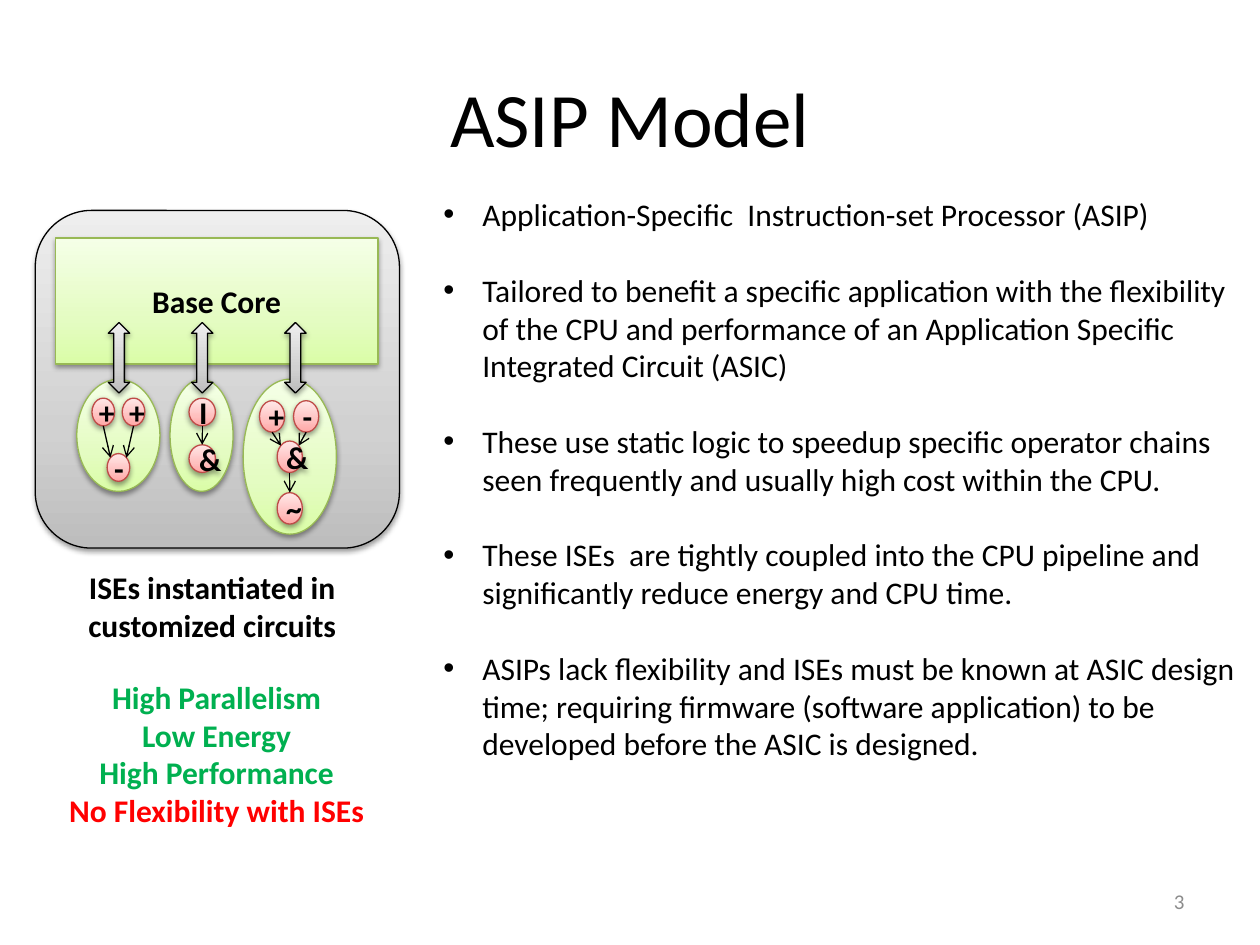
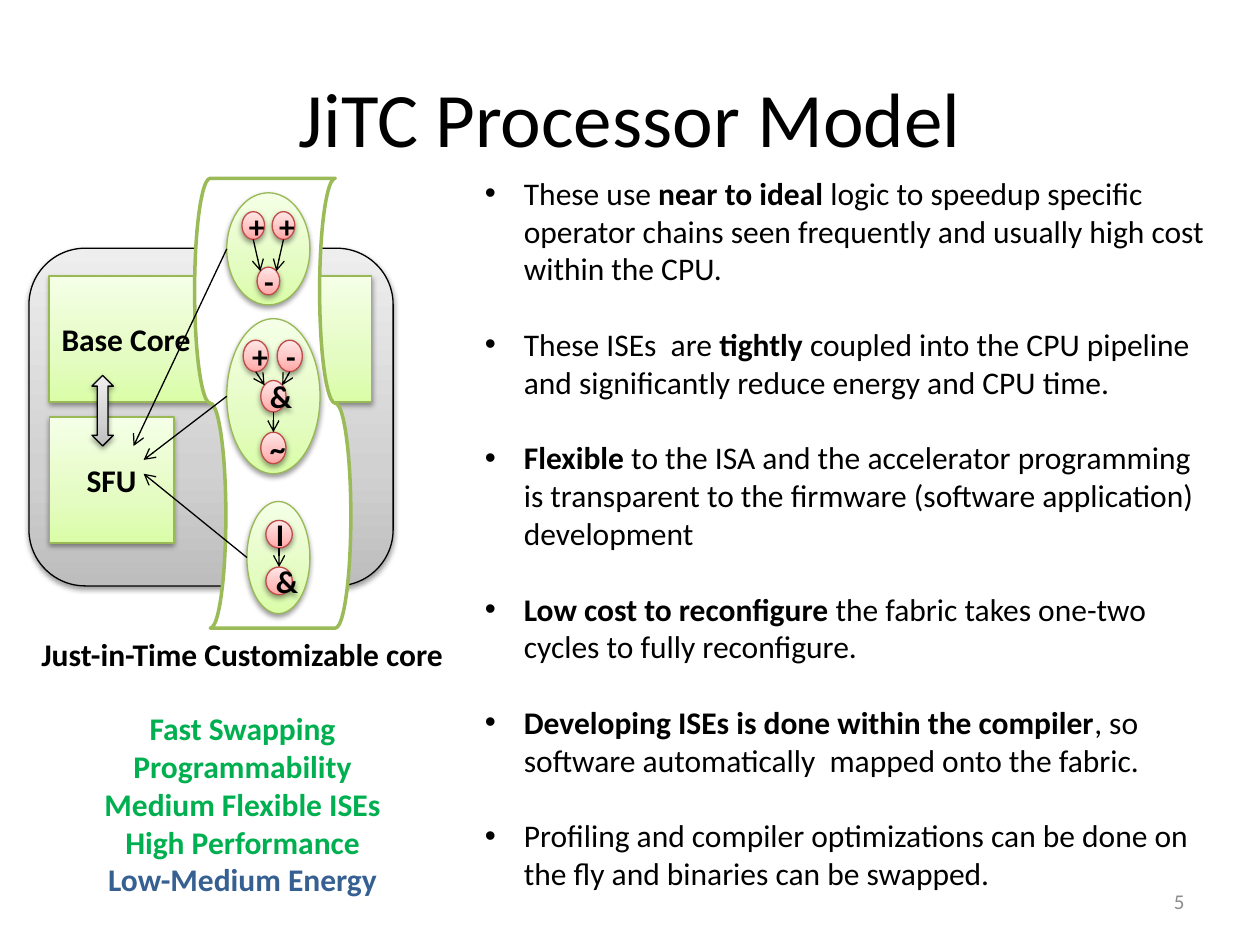
import lxml.etree
import pptx
import pptx.dml.color
import pptx.enum.shapes
import pptx.enum.text
import pptx.oxml.ns
import pptx.util

Inches = pptx.util.Inches
Pt = pptx.util.Pt
Kind = pptx.enum.shapes.MSO_SHAPE
Align = pptx.enum.text.PP_ALIGN
Anchor = pptx.enum.text.MSO_ANCHOR

FONT = "Calibri"
BLACK, WHITE, GREY = "000000", "FFFFFF", "8C8C8C"
GOOD, BAD, FAIR = "00B050", "FF0000", "376092"
STEEL = (["BDBDBD", "D1D1D1", "EEEEEE"], BLACK)
LIME = (["DAFDA7", "E4FCC2", "F5FFE7"], "98B955")
ROSE = (["FFA6A5", "FFC0BF", "FFE7E7"], "BF4C48")
STOPS = (0, 35, 100)

PAIR = {
    "size": (0.66, 0.89),
    "dot": (0.18, 0.22),
    "ops": [("+", 0.12, 0.15), ("+", 0.36, 0.15), ("-", 0.24, 0.59)],
    "flow": [(0, 2), (1, 2)],
}
CHAIN = {
    "size": (0.5, 0.89),
    "dot": (0.21, 0.22),
    "ops": [("I", 0.15, 0.15), ("&", 0.15, 0.52)],
    "flow": [(0, 1)],
}
TREE = {
    "size": (0.74, 1.23),
    "dot": (0.2, 0.25),
    "ops": [("+", 0.13, 0.17), ("&", 0.27, 0.49), ("-", 0.4, 0.17), ("~", 0.27, 0.9)],
    "flow": [(0, 1), (2, 1), (1, 3)],
}


def tint(code):
    return pptx.dml.color.RGBColor.from_string(code)


def node(parent, tag, **attrs):
    name = pptx.oxml.ns.qn("a:" + tag)
    return lxml.etree.SubElement(parent, name, {k: str(v) for k, v in attrs.items()})


def write(frame, lines, size=18, color=BLACK, bold=False, align=Align.CENTER,
          anchor=Anchor.TOP, wrap=True, bullet=False):
    frame.word_wrap = wrap
    frame.vertical_anchor = anchor
    for i, line in enumerate(lines):
        para = frame.add_paragraph() if i else frame.paragraphs[0]
        para.alignment = align
        words, hue = line if isinstance(line, tuple) else (line, color)
        for j, part in enumerate(words.split("*")):
            if part:
                run = para.add_run()
                run.text = part
                run.font.name = FONT
                run.font.size = Pt(size)
                run.font.bold = bold or j % 2 == 1
                run.font.color.rgb = tint(hue)
        if bullet:
            para.space_before = Pt(21.6 if i else 0)
            props = para._p.get_or_add_pPr()
            props.set("marL", str(Inches(0.31)))
            props.set("indent", str(-Inches(0.31)))
            node(props, "buFont", typeface="Arial")
            node(props, "buChar", char="•")


def label(slide, box, lines, **style):
    area = slide.shapes.add_textbox(*map(Inches, box))
    write(area.text_frame, lines, **style)


def solid(slide, kind, box, look, words="", align=Align.CENTER):
    shape = slide.shapes.add_shape(kind, *map(Inches, box))
    shades, edge = look
    shape.fill.gradient()
    shape.fill.gradient_angle = 90
    ramp = next(shape._element.spPr.iter(pptx.oxml.ns.qn("a:gsLst")))
    for stop in list(ramp):
        ramp.remove(stop)
    for pos, shade in zip(STOPS, shades):
        node(node(ramp, "gs", pos=pos * 1000), "srgbClr", val=shade)
    shape.line.color.rgb = tint(edge)
    shape.line.width = Pt(0.75)
    shape.shadow.inherit = False
    glow = shape._element.spPr.find(pptx.oxml.ns.qn("a:effectLst"))
    cast = node(glow, "outerShdw", blurRad=Pt(3.1), dist=Pt(1.6), dir=5400000, rotWithShape=0)
    node(node(cast, "srgbClr", val=BLACK), "alpha", val=38000)
    if words:
        write(shape.text_frame, [words], bold=True, align=align, anchor=Anchor.MIDDLE)
    return shape


def arrow(slide, start, end):
    wire = slide.shapes.add_connector(
        pptx.enum.shapes.MSO_CONNECTOR.STRAIGHT, *map(Inches, (*start, *end)))
    wire.line.color.rgb = tint(BLACK)
    wire.line.width = Pt(0.75)
    node(wire.line._get_or_add_ln(), "tailEnd", type="arrow")
    node(wire._element.spPr, "effectLst")


def cluster(slide, x, y, plan):
    solid(slide, Kind.OVAL, (x, y, *plan["size"]), LIME)
    w, h = plan["dot"]
    for sign, dx, dy in plan["ops"]:
        solid(slide, Kind.OVAL, (x + dx, y + dy, w, h), ROSE, sign)
    for a, b in plan["flow"]:
        (_, ax, ay), (_, bx, by) = plan["ops"][a], plan["ops"][b]
        side = (ax > bx) - (ax < bx)
        drop = 0.15 * h if side else 0
        arrow(slide, (x + ax + w / 2, y + ay + h),
              (x + bx + w / 2 + side * 0.35 * w, y + by + drop))


def link(slide, x, y):
    solid(slide, Kind.UP_DOWN_ARROW, (x, y, 0.17, 0.56), STEEL)


def chip(slide, x, y, align):
    solid(slide, Kind.ROUNDED_RECTANGLE, (x, y, 2.89, 2.68), STEEL)
    solid(slide, Kind.RECTANGLE, (x + 0.16, y + 0.22, 2.56, 1), LIME, "Base Core", align)


def fixed(slide, x, y):
    chip(slide, x, y, Align.CENTER)
    for dx, plan in ((0.33, PAIR), (1.07, CHAIN), (1.65, TREE)):
        cluster(slide, x + dx, y + 1.34, plan)
    for dx in (0.58, 1.24, 1.98):
        link(slide, x + dx, y + 0.89)


def tape(slide, x, y):
    strip = slide.shapes.add_shape(
        Kind.FLOWCHART_PUNCHED_TAPE, *map(Inches, (x, y, 3.57, 1.24)))
    strip.rotation = 270
    strip.fill.solid()
    strip.fill.fore_color.rgb = tint(WHITE)
    strip.line.color.rgb = tint("9BBB59")
    strip.line.width = Pt(2)
    strip.shadow.inherit = False


def swap(slide, x, y):
    chip(slide, x, y, Align.LEFT)
    solid(slide, Kind.RECTANGLE, (x + 0.16, y + 1.34, 0.99, 1), LIME, "SFU")
    link(slide, x + 0.5, y + 1.01)
    tape(slide, x + 0.15, y + 0.61)
    feeds = [
        (PAIR, 1.57, -0.44, (0.83, 1.57)),
        (TREE, 1.57, 0.56, (0.91, 1.68)),
        (CHAIN, 1.73, 2.01, (0.91, 1.79)),
    ]
    for plan, dx, dy, _ in feeds:
        cluster(slide, x + dx, y + dy, plan)
    for plan, dx, dy, (tx, ty) in feeds:
        arrow(slide, (x + dx, y + dy + plan["size"][1] / 2), (x + tx, y + ty))


def page(deck, title, number, box, points):
    slide = deck.slides.add_slide(deck.slide_layouts[5])
    head = slide.shapes.title
    head.left, head.top, head.width, head.height = map(Inches, (0.5, 0.3, 9, 1.25))
    write(head.text_frame, [title], size=44, anchor=Anchor.MIDDLE)
    label(slide, (7.17, 6.95, 2.33, 0.4), [number], size=12, color=GREY,
          align=Align.RIGHT, anchor=Anchor.MIDDLE)
    label(slide, box, points, align=Align.LEFT, bullet=True)
    return slide


def asip(deck):
    slide = page(deck, "ASIP Model", "3", (3.42, 1.5, 6.55, 4.64), [
        "Application-Specific  Instruction-set Processor (ASIP)",
        "Tailored to benefit a specific application with the flexibility of the CPU and "
        "performance of an Application Specific Integrated Circuit (ASIC)",
        "These use static logic to speedup specific operator chains seen frequently and "
        "usually high cost within the CPU.",
        "These ISEs  are tightly coupled into the CPU pipeline and significantly reduce "
        "energy and CPU time.",
        "ASIPs lack flexibility and ISEs must be known at ASIC design time; requiring "
        "firmware (software application) to be developed before the ASIC is designed.",
    ])
    fixed(slide, 0.28, 1.67)
    label(slide, (0.47, 4.46, 2.43, 0.63), ["ISEs instantiated in customized circuits"], bold=True)
    label(slide, (0.44, 5.33, 2.56, 1.31), [
        "High Parallelism", "Low Energy", "High Performance",
        ("No Flexibility with ISEs", BAD),
    ], color=GOOD, bold=True)


def jitc(deck):
    slide = page(deck, "JiTC Processor Model", "5", (3.75, 1.33, 6, 5.86), [
        "These use *near to ideal *logic to speedup specific operator chains seen "
        "frequently and usually high cost within the CPU.",
        "These ISEs  are *tightly* coupled into the CPU pipeline and significantly "
        "reduce energy and CPU time.",
        "*Flexible* to the ISA and the accelerator programming is transparent to the "
        "firmware (software application) development",
        "*Low cost to reconfigure* the fabric takes one-two cycles to fully reconfigure.",
        "*Developing ISEs is done within the compiler*, so software automatically  "
        "mapped onto the fabric.",
        "Profiling and compiler optimizations can be done on the fly and binaries can "
        "be swapped.",
    ])
    swap(slide, 0.23, 1.97)
    label(slide, (0.23, 4.99, 3.44, 0.36), ["Just-in-Time Customizable core"],
          bold=True, align=Align.LEFT, wrap=False)
    label(slide, (0.43, 5.58, 2.99, 1.62), [
        "Fast Swapping", "Programmability", "Medium Flexible ISEs", "High Performance",
        ("Low-Medium Energy", FAIR),
    ], color=GOOD, bold=True)


def main():
    deck = pptx.Presentation()
    deck.slide_width, deck.slide_height = Inches(10), Inches(7.5)
    asip(deck)
    jitc(deck)
    deck.save("out.pptx")


if __name__ == "__main__":
    main()
